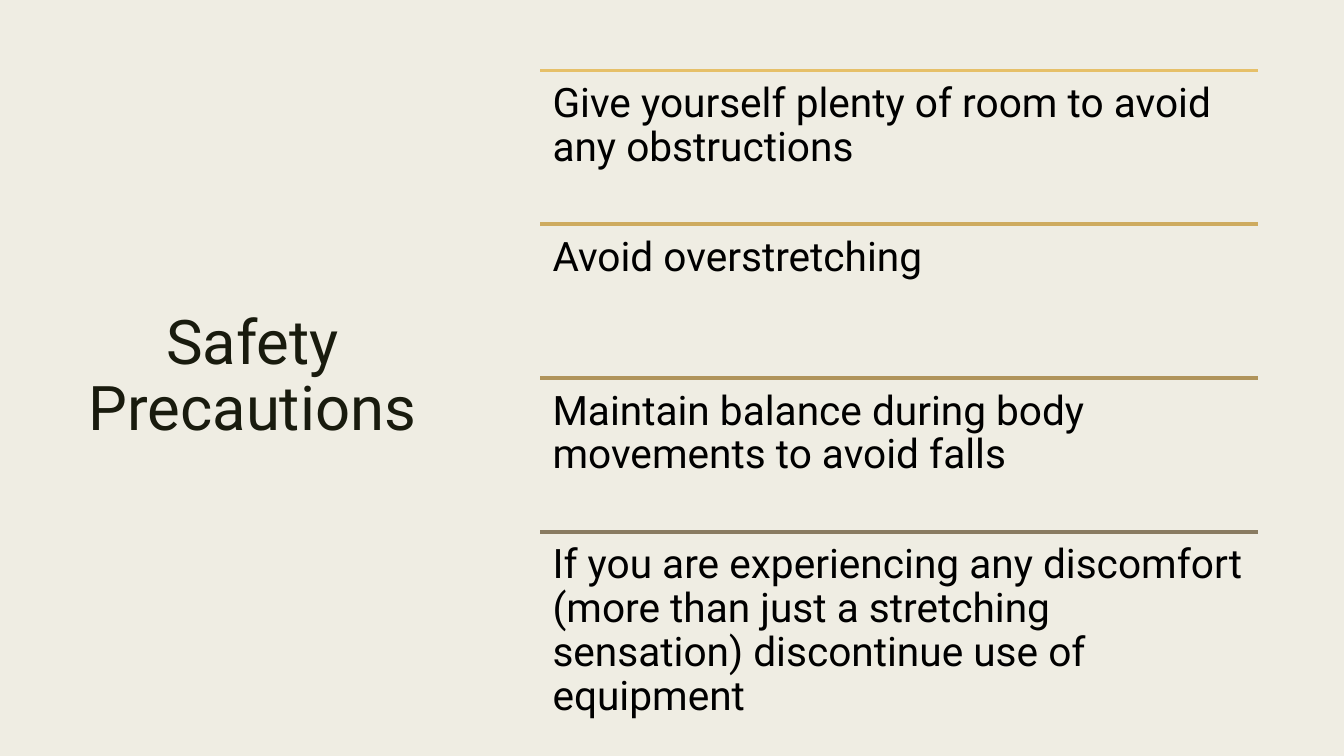
from pptx import Presentation
from pptx.dml.color import RGBColor
from pptx.enum.shapes import MSO_CONNECTOR
from pptx.enum.text import MSO_ANCHOR, PP_ALIGN
from pptx.oxml.ns import qn
from pptx.util import Inches, Pt
from lxml.etree import SubElement

HUES = {"back": "EFEDE3", "title": "191B0E", "text": "000000",
        "gold": "E6C069", "sand": "CEAB5F", "tan": "B0945B", "brown": "897B61"}
RULES = [
    ("gold", "Give yourself plenty of room to avoid any obstructions"),
    ("sand", "Avoid overstretching"),
    ("tan", "Maintain balance during body movements to avoid falls"),
    ("brown", "If you are experiencing any discomfort (more than just a "
              "stretching sensation) discontinue use of equipment"),
]
TITLE = {
    "frame": {"vertical_anchor": MSO_ANCHOR.MIDDLE},
    "para": {"alignment": PP_ALIGN.CENTER, "line_spacing": 0.89, "space_after": Pt(6)},
    "font": {"size": Pt(44)},
}
PAD = Inches(0.12)
ITEM = {
    "frame": {"vertical_anchor": MSO_ANCHOR.TOP, "margin_left": PAD, "margin_right": PAD,
              "margin_top": PAD, "margin_bottom": PAD},
    "para": {"alignment": PP_ALIGN.LEFT, "line_spacing": 0.9},
    "font": {"size": Pt(29)},
}


def color(name):
    return RGBColor.from_string(HUES[name])


def apply(target, values):
    for name, value in values.items():
        setattr(target, name, value)


def write(slide, box, text, style, hue):
    frame = slide.shapes.add_textbox(*map(Inches, box)).text_frame
    apply(frame, {"word_wrap": True, **style["frame"]})
    para = frame.paragraphs[0]
    apply(para, style["para"])
    run = para.add_run()
    run.text = text
    apply(run.font, {"name": "Roboto", **style["font"]})
    run.font.color.rgb = color(hue)


def rule(slide, left, top, width, hue):
    ends = map(Inches, (left, top, left + width, top))
    line = slide.shapes.add_connector(MSO_CONNECTOR.STRAIGHT, *ends)
    line.line.width = Pt(2.75)
    line.line.color.rgb = color(hue)
    SubElement(line._element.spPr, qn("a:effectLst"))


def heading(slide, box):
    write(slide, box, "Safety Precautions", TITLE, "title")


def listing(slide, box):
    left, top, width, height = box
    row = height / len(RULES)
    for index, (hue, text) in enumerate(RULES):
        y = top + index * row
        rule(slide, left, y, width, hue)
        write(slide, (left, y, width, row), text, ITEM, "text")


def main():
    deck = Presentation()
    apply(deck, {"slide_width": Inches(13.33), "slide_height": Inches(7.5)})
    slide = deck.slides.add_slide(deck.slide_layouts[6])
    fill = slide.background.fill
    fill.solid()
    fill.fore_color.rgb = color("back")
    heading(slide, (0.7, 0.7, 3.61, 6.1))
    listing(slide, (5.36, 0.7, 7.12, 6.1))
    deck.save("out.pptx")


if __name__ == "__main__":
    main()
